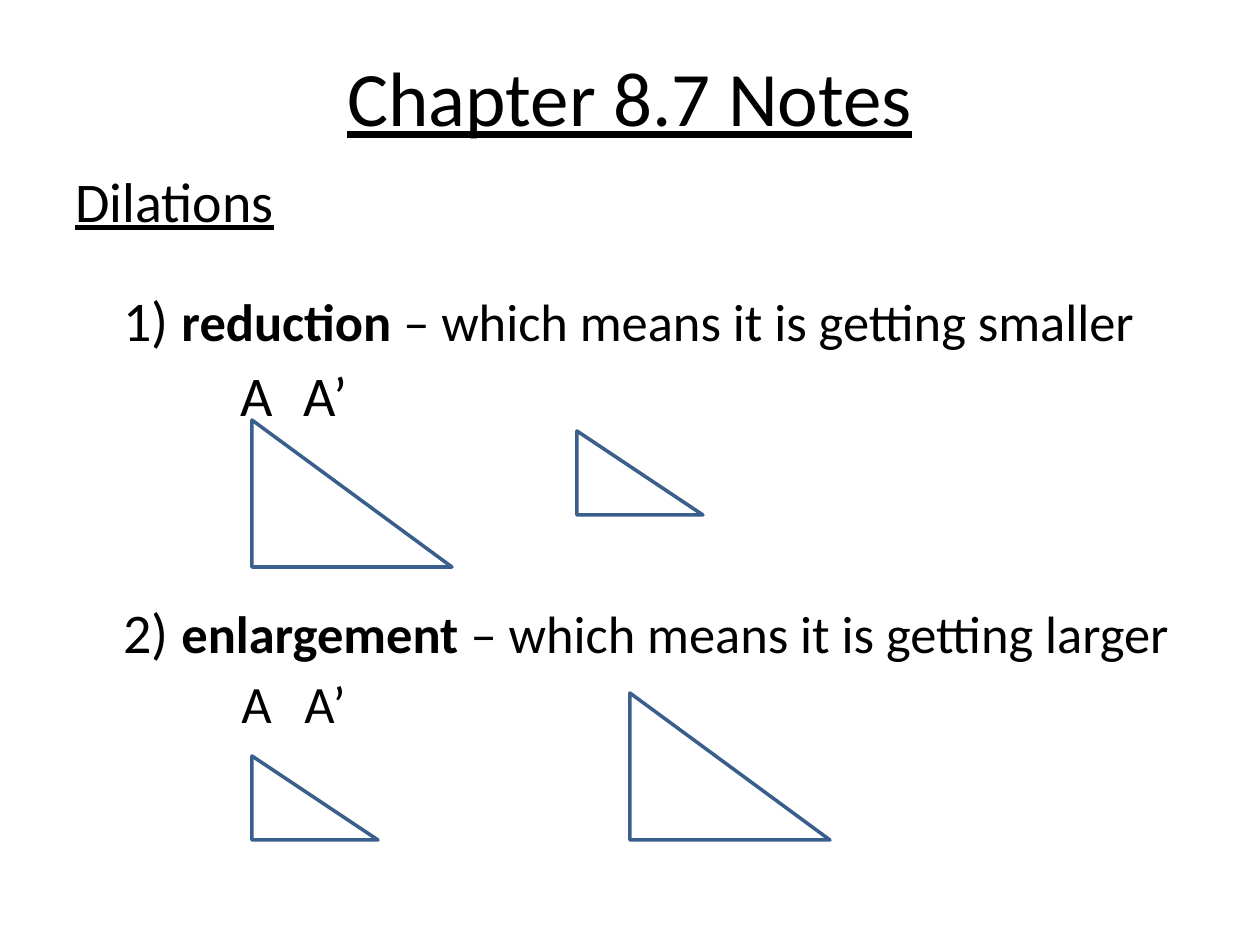
from lxml import etree
from pptx import Presentation
from pptx import util as u
from pptx.dml.color import RGBColor
from pptx.enum import shapes, text
from pptx.oxml.ns import qn

PX = 914400 // 126
FONT = "Calibri"
BLACK = "000000"
OUTLINE = "3A5F8C"
LARGE = (200, 147)
SMALL = (126, 84)


def px(value):
    return u.Emu(value * PX)


def color(value):
    return RGBColor.from_string(value)


def add_text_frame(slide, left, top, width, height, anchor):
    frame = slide.shapes.add_textbox(*map(px, (left, top, width, height))).text_frame
    frame.word_wrap = True
    frame.vertical_anchor = anchor
    return frame


def style(paragraph, size, underline=False, before=0):
    paragraph.font.name = FONT
    paragraph.font.size = u.Pt(size)
    paragraph.font.color.rgb = color(BLACK)
    paragraph.font.underline = underline
    paragraph.space_before = u.Pt(before)


def indent(paragraph, left):
    properties = paragraph._p.get_or_add_pPr()
    properties.set("marL", str(px(left)))
    properties.set("indent", "0")
    return properties


def add_definition(frame, number, term, meaning, before):
    paragraph = frame.add_paragraph()
    style(paragraph, 30, before=before)
    indent(paragraph, 48)
    marker = paragraph.add_run()
    marker.text = f"{number}) "
    marker.font.size = u.Pt(32)
    word = paragraph.add_run()
    word.text = term
    word.font.bold = True
    paragraph.add_run().text = f" – {meaning}"


def add_labels(frame, size, first, second):
    paragraph = frame.add_paragraph()
    style(paragraph, size, before=4)
    properties = indent(paragraph, first)
    tabs = etree.Element(qn("a:tabLst"))
    etree.SubElement(tabs, qn("a:tab"), pos=str(px(second)), algn="l")
    properties.find(qn("a:spcBef")).addnext(tabs)
    paragraph.add_run().text = "A\tA’"


def add_triangle(slide, left, top, size):
    triangle = slide.shapes.add_shape(
        shapes.MSO_SHAPE.RIGHT_TRIANGLE, *map(px, (left, top, *size)))
    triangle.shadow.inherit = False
    triangle.fill.background()
    triangle.line.color.rgb = color(OUTLINE)
    triangle.line.width = u.Pt(2)


def add_title(slide):
    frame = add_text_frame(slide, 63, 41, 1134, 110, text.MSO_ANCHOR.MIDDLE)
    title = frame.paragraphs[0]
    title.text = "Chapter 8.7 Notes"
    title.alignment = text.PP_ALIGN.CENTER
    style(title, 44, underline=True)


def add_notes(slide):
    frame = add_text_frame(slide, 63, 160, 1134, 735, text.MSO_ANCHOR.TOP)
    heading = frame.paragraphs[0]
    heading.text = "Dilations"
    style(heading, 32, underline=True)
    add_definition(frame, 1, "reduction", "which means it is getting smaller", 30)
    add_labels(frame, 32, 165, 501)
    add_definition(frame, 2, "enlargement", "which means it is getting larger", 97)
    add_labels(frame, 30, 166, 505)


def main():
    presentation = Presentation()
    presentation.slide_width = px(1260)
    presentation.slide_height = px(945)
    slide = presentation.slides.add_slide(presentation.slide_layouts[6])
    add_title(slide)
    add_notes(slide)
    for left, top, size in ((252, 420, LARGE), (577, 431, SMALL),
                            (252, 756, SMALL), (630, 693, LARGE)):
        add_triangle(slide, left, top, size)
    presentation.save("out.pptx")


if __name__ == "__main__":
    main()
